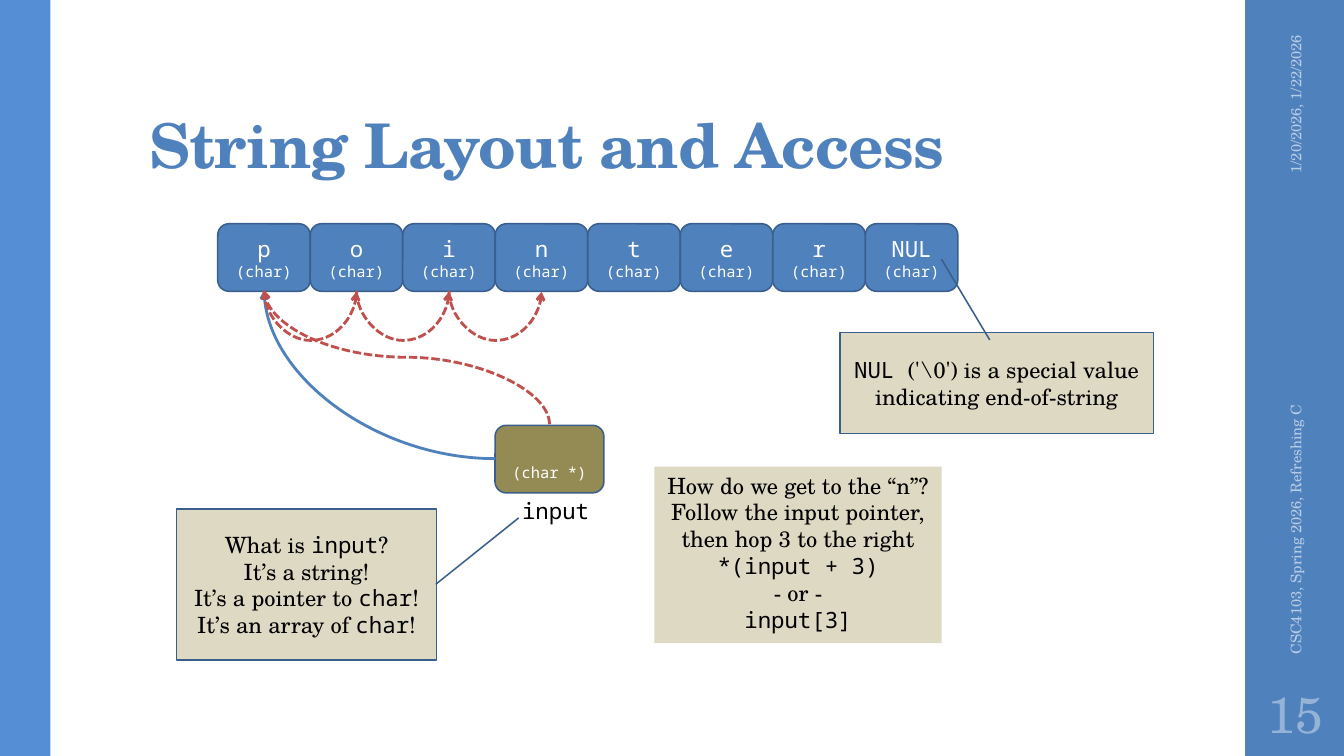
from dataclasses import dataclass
from typing import NamedTuple, Optional

import lxml.etree
import pptx
import pptx.dml.color
import pptx.enum.dml
import pptx.enum.shapes
import pptx.enum.text
import pptx.oxml.ns
import pptx.util

Inches = pptx.util.Inches
Preset = pptx.enum.shapes.MSO_SHAPE
Align = pptx.enum.text.PP_ALIGN
Anchor = pptx.enum.text.MSO_ANCHOR
qn = pptx.oxml.ns.qn


@dataclass(frozen=True)
class Theme:
    serif: str = "TeX Gyre Schola"
    mono: str = "Noto Sans Mono"
    blue: str = "4F81BD"
    light_blue: str = "558ED5"
    outline: str = "3A5F8C"
    olive: str = "948A54"
    tan: str = "DDD9C3"
    red: str = "C0504D"
    footer: str = "B9CDE5"
    number: str = "95B3D7"
    white: str = "FFFFFF"
    black: str = "000000"
    title_size: float = 44
    number_size: float = 36
    text_size: float = 16
    type_size: float = 11
    footer_size: float = 10.5
    outline_width: float = 1.1
    arrow_width: float = 2


THEME = Theme()


class Box(NamedTuple):
    left: float
    top: float
    width: float
    height: float


class Span(NamedTuple):
    text: str
    font: str = THEME.serif
    size: float = THEME.text_size
    color: str = THEME.black


Line = tuple[Span, ...]


@dataclass(frozen=True)
class Callout:
    box: Box
    pointer: tuple[float, ...]
    lines: list[Line]


@dataclass(frozen=True)
class Arrow:
    frame: Box
    rotation: int
    color: str
    flip: str = ""
    bend: Optional[float] = None
    dashed: bool = True


@dataclass(frozen=True)
class SideLabel:
    box: Box
    span: Span
    align: Align
    rotation: int = 270
    inset: float = 0.1


def rgb(color: str) -> pptx.dml.color.RGBColor:
    return pptx.dml.color.RGBColor.from_string(color)


def code(text: str) -> Span:
    return Span(text, THEME.mono)


def write(frame, lines: list[Line], align=Align.CENTER, anchor=Anchor.MIDDLE, wrap=True) -> None:
    frame.word_wrap = wrap
    frame.vertical_anchor = anchor
    for index, line in enumerate(lines):
        paragraph = frame.add_paragraph() if index else frame.paragraphs[0]
        paragraph.alignment = align
        for span in line:
            run = paragraph.add_run()
            run.text = span.text
            run.font.name = span.font
            run.font.size = pptx.util.Pt(span.size)
            run.font.color.rgb = rgb(span.color)


def add_block(slide, preset, box: Box, fill: str, outline: Optional[str] = THEME.outline):
    block = slide.shapes.add_shape(preset, *map(Inches, box))
    block.shadow.inherit = False
    block.fill.solid()
    block.fill.fore_color.rgb = rgb(fill)
    if outline:
        block.line.color.rgb = rgb(outline)
        block.line.width = pptx.util.Pt(THEME.outline_width)
    else:
        block.line.fill.background()
    return block


def add_callout(slide, callout: Callout) -> None:
    note = add_block(slide, Preset.LINE_CALLOUT_1, callout.box, THEME.tan)
    for index, value in enumerate(callout.pointer):
        note.adjustments[index] = value
    write(note.text_frame, callout.lines)


def add_arrow(slide, arrow: Arrow) -> None:
    left, top, width, height = arrow.frame
    curve = slide.shapes.add_connector(
        pptx.enum.shapes.MSO_CONNECTOR.CURVE,
        *map(Inches, (left, top, left + width, top + height)))
    curve.line.color.rgb = rgb(arrow.color)
    curve.line.width = pptx.util.Pt(THEME.arrow_width)
    if arrow.dashed:
        curve.line.dash_style = pptx.enum.dml.MSO_LINE.SQUARE_DOT
    # Rotation, flip, bend and arrowhead
    properties = curve._element.spPr
    transform = properties.find(qn("a:xfrm"))
    transform.set("rot", str(arrow.rotation * 60000))
    if arrow.flip:
        transform.set(arrow.flip, "1")
    geometry = properties.find(qn("a:prstGeom"))
    if arrow.bend is None:
        geometry.set("prst", "curvedConnector2")
    else:
        guides = geometry.find(qn("a:avLst"))
        lxml.etree.SubElement(guides, qn("a:gd"), name="adj1", fmla=f"val {round(arrow.bend * 100000)}")
    lxml.etree.SubElement(properties.find(qn("a:ln")), qn("a:tailEnd"), type="arrow")
    lxml.etree.SubElement(properties, qn("a:effectLst"))


def add_label(slide, label: SideLabel) -> None:
    text = slide.shapes.add_textbox(*map(Inches, label.box))
    text.rotation = label.rotation
    text.text_frame.margin_left = text.text_frame.margin_right = Inches(label.inset)
    write(text.text_frame, [(label.span,)], label.align)


LETTERS = ["p", "o", "i", "n", "t", "e", "r", "NUL"]
ROW = Box(2.16, 2.22, 7.34, 0.67)
CELL_WIDTH = ROW.width / len(LETTERS)
HOP_COUNT, HOP_DEPTH, HOP_RISE = 3, 0.5, 0.01

INPUT_NOTE = Callout(Box(1.75, 5.05, 2.58, 1.5), (0.498, 0.997, 0.059, 1.316), [
    (Span("What is "), code("input"), Span("?")),
    (Span("It’s a string!"),),
    (Span("It’s a pointer to "), code("char"), Span("!")),
    (Span("It’s an array of "), code("char"), Span("!")),
])
NUL_NOTE = Callout(Box(8.33, 3.3, 3.11, 1), (0.073, 0.478, -0.728, 0.324), [
    (code("NUL "), Span(r"('\0') is a special value")),
    (Span("indicating end-of-string"),),
])
ACCESS_LINES = [
    (Span("How do we get to the “n”?"),),
    (Span("Follow the input pointer,"),),
    (Span("then hop 3 to the right"),),
    (code("*(input + 3)"),),
    (Span("- or -"),),
    (code("input[3]"),),
]
SIDE_LABELS = [
    SideLabel(Box(11.81, 1.09, 2.08, 0.4),
              Span("1/20/2026, 1/22/2026", size=THEME.footer_size, color=THEME.footer), Align.RIGHT),
    SideLabel(Box(10.89, 4.43, 3.92, 0.4),
              Span("CSC4103, Spring 2026, Refreshing C", size=THEME.footer_size, color=THEME.footer), Align.LEFT),
    SideLabel(Box(12.35, 6.75, 1, 0.65),
              Span("15", size=THEME.number_size, color=THEME.number), Align.CENTER, 0, 0.05),
]


def main() -> None:
    deck = pptx.Presentation()
    deck.slide_width, deck.slide_height = Inches(13.33), Inches(7.5)
    slide = deck.slides.add_slide(deck.slide_layouts[5])

    # Side bands
    add_block(slide, Preset.RECTANGLE, Box(12.35, 0, 1, 7.5), THEME.blue, None)
    add_block(slide, Preset.RECTANGLE, Box(0, 0, 0.5, 7.5), THEME.light_blue, None)

    # Title
    title = slide.shapes.title
    title.left, title.top, title.width, title.height = map(Inches, (1.38, 0.32, 10.6, 1.53))
    heading = Span("String Layout and Access", size=THEME.title_size, color=THEME.blue)
    write(title.text_frame, [(heading,)], Align.LEFT, Anchor.BOTTOM)
    title.text_frame.auto_size = pptx.enum.text.MSO_AUTO_SIZE.NONE
    title.text_frame.margin_top = Inches(0.03)
    title_line = title.text_frame.paragraphs[0]
    title_line.line_spacing = 0.9
    title_line.runs[0].font.bold = True
    title_line.runs[0].font._element.set("spc", "-50")

    # Characters of the string
    char_type = Span("(char)", THEME.mono, THEME.type_size, THEME.white)
    for index, letter in enumerate(LETTERS):
        cell_box = Box(ROW.left + index * CELL_WIDTH, ROW.top, CELL_WIDTH, ROW.height)
        cell = add_block(slide, Preset.ROUNDED_RECTANGLE, cell_box, THEME.blue)
        write(cell.text_frame, [(code(letter)._replace(color=THEME.white),), (char_type,)])

    # Pointer variable and its name
    pointer = add_block(slide, Preset.ROUNDED_RECTANGLE, Box(4.91, 4.22, 1.08, 0.67), THEME.olive)
    pointer.text_frame.margin_bottom = Inches(0.08)
    write(pointer.text_frame, [(char_type._replace(text="(char *)"),)], anchor=Anchor.BOTTOM)
    add_arrow(slide, Arrow(Box(2.62, 2.88, 2.29, 1.67), 180, THEME.blue, dashed=False))
    variable = slide.shapes.add_textbox(*map(Inches, (5.08, 4.88, 0.88, 0.37)))
    write(variable.text_frame, [(code("input"),)], Align.LEFT, Anchor.TOP, wrap=False)

    # Explanations
    add_callout(slide, INPUT_NOTE)
    access = add_block(slide, Preset.RECTANGLE, Box(6.49, 4.63, 2.85, 1.75), THEME.tan, None)
    write(access.text_frame, ACCESS_LINES, anchor=Anchor.TOP, wrap=False)

    # Path from the pointer to the letter n
    add_arrow(slide, Arrow(Box(3.37, 2.13, 1.33, 2.83), 270, THEME.red, "flipV", 0.5))
    for hop in range(HOP_COUNT):
        middle = ROW.left + (hop + 1) * CELL_WIDTH
        hop_frame = Box(middle - HOP_RISE / 2, ROW.top + ROW.height - CELL_WIDTH / 2, HOP_RISE, CELL_WIDTH)
        add_arrow(slide, Arrow(hop_frame, 270, THEME.red, "flipH", HOP_DEPTH / HOP_RISE))
    add_callout(slide, NUL_NOTE)

    # Date, footer and slide number
    for label in SIDE_LABELS:
        add_label(slide, label)
    deck.save("out.pptx")


if __name__ == "__main__":
    main()
